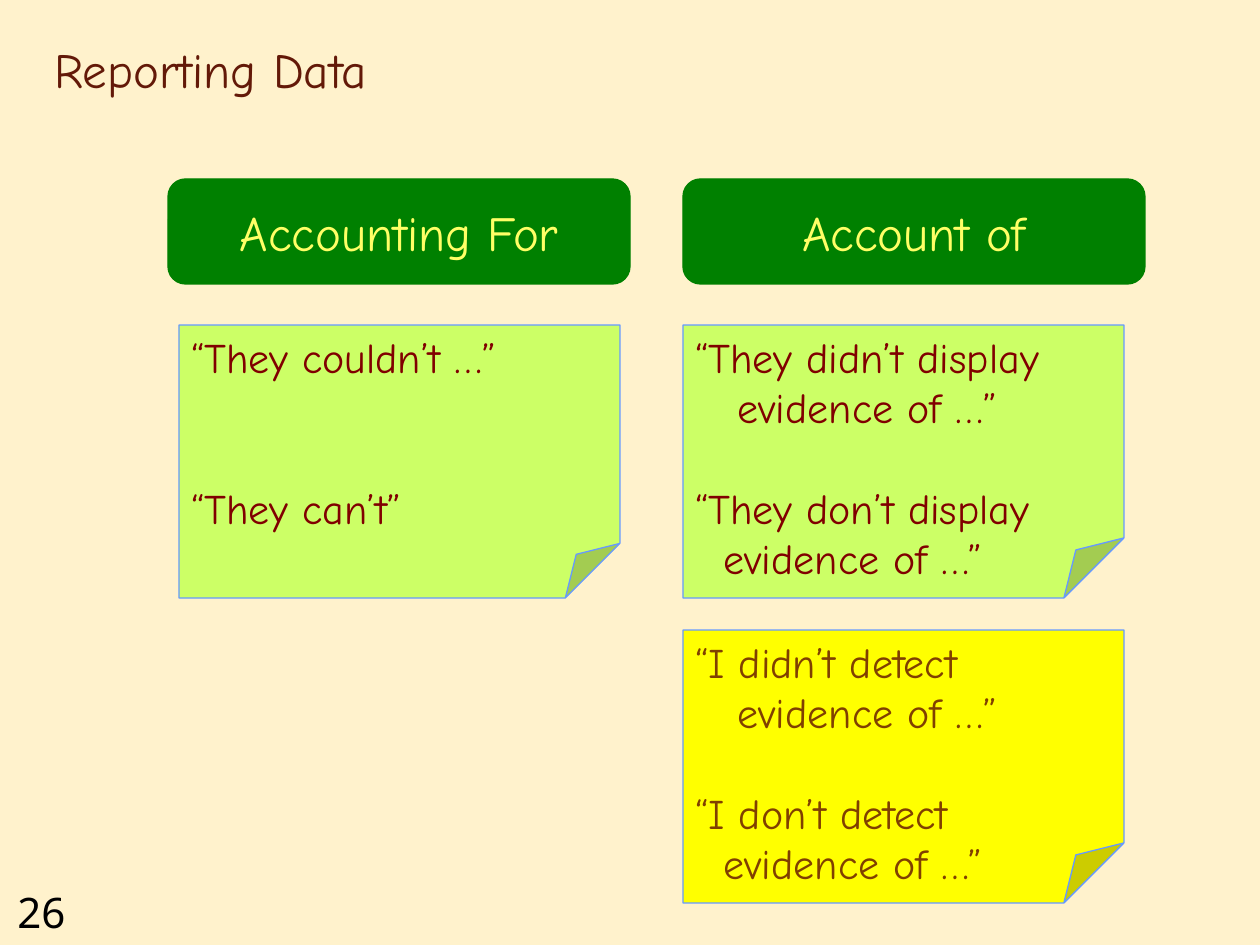
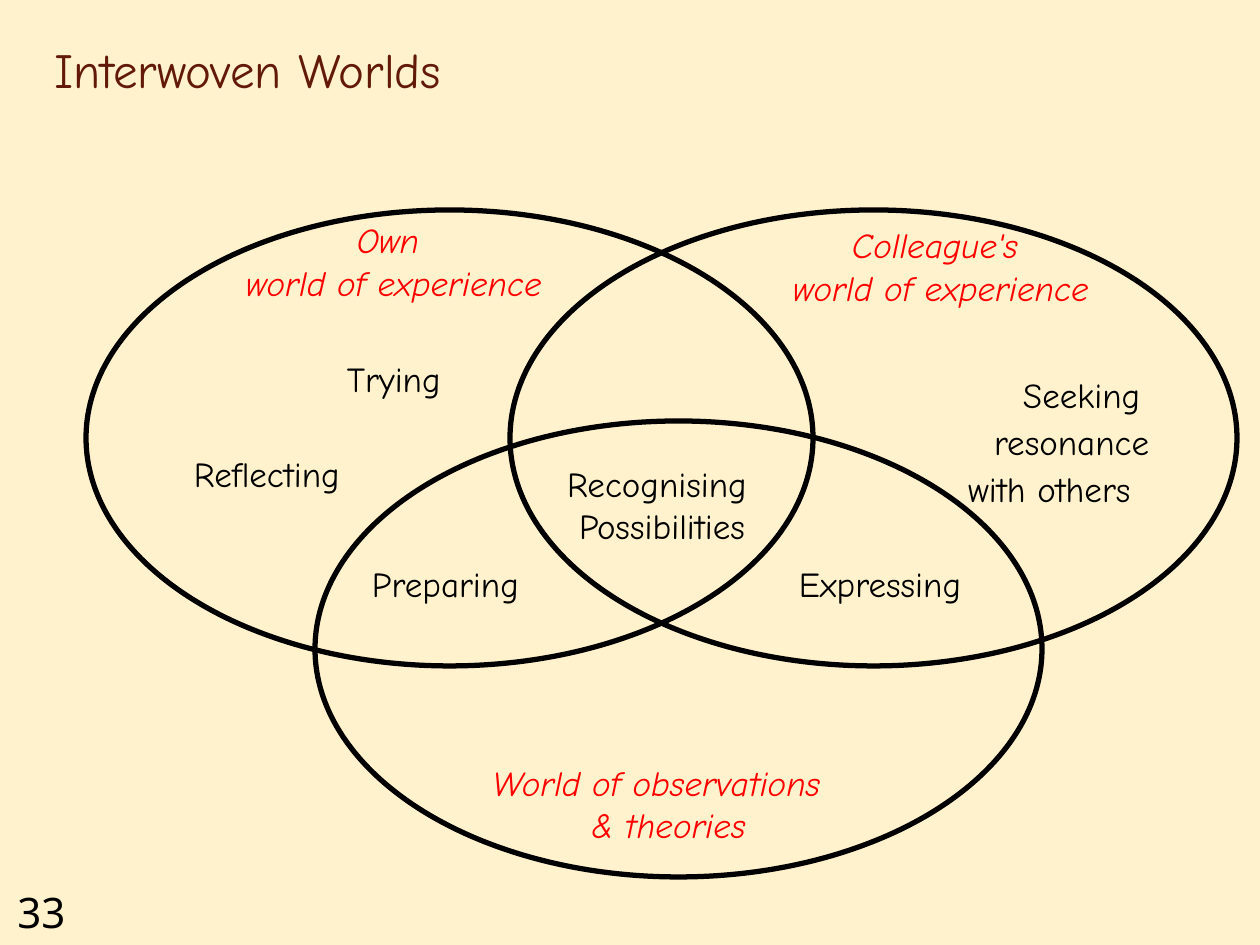
"""Build two slides: a comparison of ways to report data, and a diagram of three interwoven worlds."""
from lxml import etree
from pptx import Presentation, util as u
from pptx.dml.color import RGBColor
from pptx.enum import shapes, text
from pptx.oxml.ns import qn

SCALE = 914400 / 126
HAND, PLAIN = "Comic Neue", "Noto Sans"
COLOURS = {
    "page": "FFF2CC", "title": "631908", "ink": "000000", "world": "FF0000",
    "heading": "008000", "heading text": "FFFF66", "note edge": "6699FF",
    "lime": "CCFF66", "lime text": "800000", "yellow": "FFFF00", "yellow text": "804000",
}
NOTE_LINE = 28.8

HEADINGS = [(168, "Accounting For"), (683, "Account of")]
HEADING_TOP, HEADING_SIZE = 179, (462, 105)
NOTE_SIZE = (441, 273)
# Each line is (words, indent in px, empty lines above).
NOTES = [
    (179, 325, "lime", 0.2, [("“They couldn’t …”", 0, 0), ("“They can’t”", 0, 2)]),
    (683, 325, "lime", 0.22, [("“They didn’t display", 0, 0), ("evidence of …”", 42, 0),
                              ("“They don’t display", 0, 1), ("evidence of …”", 28, 0)]),
    (683, 630, "yellow", 0.22, [("“I didn’t detect", 0, 0), ("evidence of …”", 42, 0),
                                ("“I don’t detect", 0, 1), ("evidence of …”", 28, 0)]),
]

OVAL_SIZE = (727, 456)
OVALS = [(315, 421), (86, 210), (510, 210)]
WORLDS = [
    (199, 219, 378, True, ["Own", ("world of experience", 12, 0)]),
    (746, 224, 378, True, ["Colleague's", ("world of experience", 12, 0)]),
    (481, 761, 363, False, ["World of observations ", ("& theories", 12, 0)]),
]
ACTIONS = [
    (347, 357, 100, ["Trying"]),
    (194, 452, 163, ["Reflecting"]),
    (1023, 373, 122, ["Seeking"]),
    (994, 420, 158, ["resonance"]),
    (968, 467, 183, ["with others"]),
    (567, 462, 194, ["Recognising", ("Possibilities", 12, 0)]),
    (799, 562, 166, ["Expressing"]),
    (372, 562, 154, ["Preparing"]),
]


def px(length):
    return u.Emu(round(length * SCALE))


def rgb(name):
    return RGBColor.from_string(COLOURS[name])


def write(shape, lines, *, colour, size, font=HAND, italic=False, centred=False,
          anchor=text.MSO_ANCHOR.TOP, wrap=True, inset=True):
    frame = shape.text_frame
    frame.word_wrap = wrap
    frame.vertical_anchor = anchor
    if not inset:
        frame.margin_left = frame.margin_top = frame.margin_right = frame.margin_bottom = 0
    for index, line in enumerate(lines):
        words, indent, gap = (line, 0, 0) if isinstance(line, str) else line
        paragraph = frame.paragraphs[0] if index == 0 else frame.add_paragraph()
        paragraph.alignment = text.PP_ALIGN.CENTER if centred else text.PP_ALIGN.LEFT
        if indent:
            paragraph._p.get_or_add_pPr().set("marL", str(px(indent)))
        if gap:
            paragraph.space_before = u.Pt(gap * NOTE_LINE)
        run = paragraph.add_run()
        run.text = words
        run.font.name, run.font.size, run.font.italic = font, u.Pt(size), italic
        run.font.color.rgb = rgb(colour)


def add_text(slide, left, top, width, height, lines, **style):
    box = slide.shapes.add_textbox(px(left), px(top), px(width), px(height))
    write(box, lines, **style)


def add_figure(slide, kind, left, top, size, edge, weight=0.75, fill=None):
    figure = slide.shapes.add_shape(kind, px(left), px(top), px(size[0]), px(size[1]))
    figure.shadow.inherit = False
    if fill:
        figure.fill.solid()
        figure.fill.fore_color.rgb = rgb(fill)
    else:
        figure.fill.background()
    figure.line.color.rgb = rgb(edge)
    figure.line.width = u.Pt(weight)
    return figure


def set_fold(note, fold):
    geometry = note.element.spPr.find(qn("a:prstGeom"))
    guides = geometry.find(qn("a:avLst"))
    if guides is None:
        guides = etree.SubElement(geometry, qn("a:avLst"))
    etree.SubElement(guides, qn("a:gd"), name="adj", fmla=f"val {round(fold * 100000)}")


def add_page(deck, title, number):
    slide = deck.slides.add_slide(deck.slide_layouts[6])
    slide.background.fill.solid()
    slide.background.fill.fore_color.rgb = rgb("page")
    add_text(slide, 5, 880, 94, 63, [number], colour="ink", size=24, font=PLAIN)
    add_text(slide, 42, 21, 1071, 84, [title], colour="title", size=28,
             anchor=text.MSO_ANCHOR.BOTTOM)
    return slide


def build_reporting(deck):
    slide = add_page(deck, "Reporting Data", "26")
    for left, top, paper, fold, lines in NOTES:
        note = add_figure(slide, shapes.MSO_SHAPE.FOLDED_CORNER, left, top, NOTE_SIZE,
                          "note edge", fill=paper)
        set_fold(note, fold)
        write(note, lines, colour=f"{paper} text", size=24)
    for left, words in HEADINGS:
        heading = add_figure(slide, shapes.MSO_SHAPE.ROUNDED_RECTANGLE, left, HEADING_TOP,
                             HEADING_SIZE, "heading", fill="heading")
        write(heading, [words], colour="heading text", size=28, centred=True,
              anchor=text.MSO_ANCHOR.MIDDLE, wrap=False)


def build_worlds(deck):
    slide = add_page(deck, "Interwoven Worlds", "33")
    for left, top in OVALS:
        add_figure(slide, shapes.MSO_SHAPE.OVAL, left, top, OVAL_SIZE, "ink", weight=3)
    for left, top, width, wrap, lines in WORLDS:
        add_text(slide, left, top, width, 42 * len(lines), lines, colour="world", size=20,
                 italic=True, centred=True, wrap=wrap, inset=False)
    for left, top, width, lines in ACTIONS:
        add_text(slide, left, top, width, 42 * len(lines), lines, colour="ink", size=20,
                 wrap=False, inset=False)


def main():
    deck = Presentation()
    deck.slide_width, deck.slide_height = px(1260), px(945)
    build_reporting(deck)
    build_worlds(deck)
    deck.save("out.pptx")


if __name__ == "__main__":
    main()
